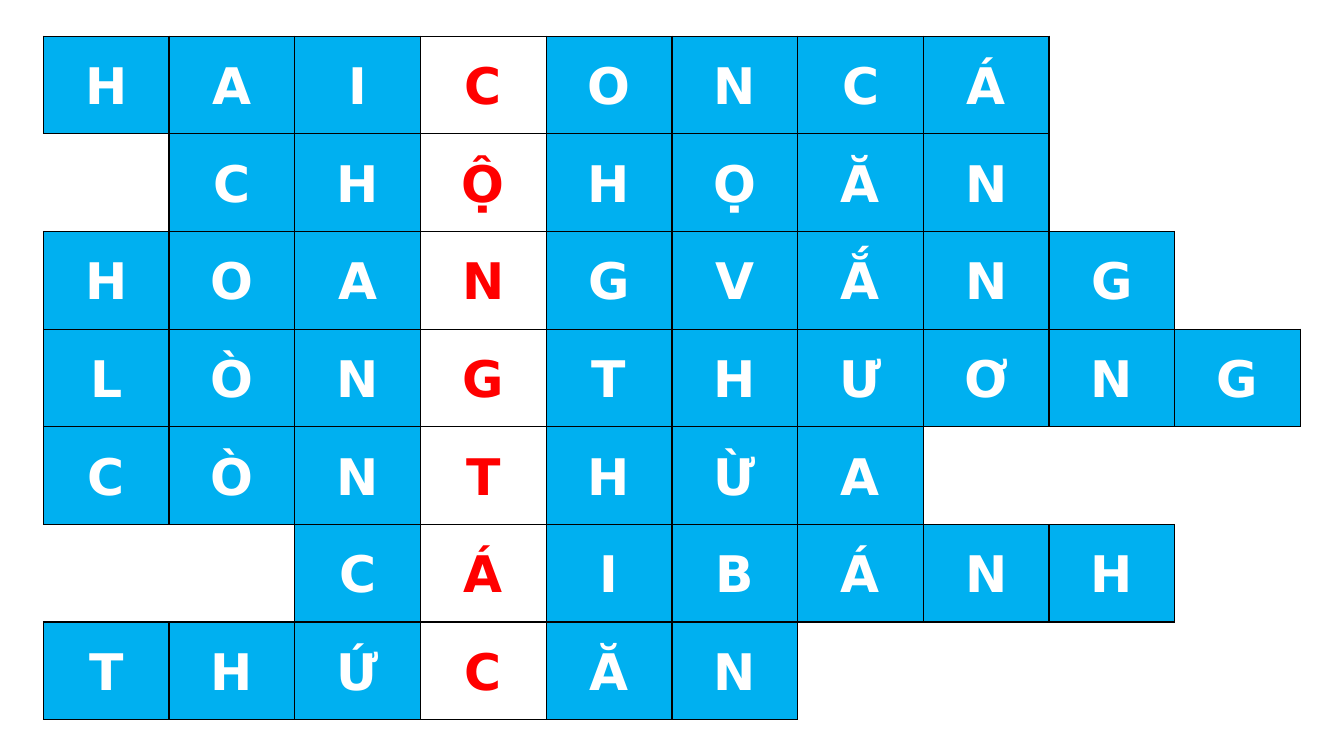
import pptx
import pptx.util
import pptx.dml.color
import pptx.enum.text
import pptx.oxml.ns
from lxml import etree

Inches = pptx.util.Inches
Pt = pptx.util.Pt
RGBColor = pptx.dml.color.RGBColor

# Content: starting column and letters of each crossword answer
ANSWERS = [
    (0, "HAICONCÁ"),
    (1, "CHỘHỌĂN"),
    (0, "HOANGVẮNG"),
    (0, "LÒNGTHƯƠNG"),
    (0, "CÒNTHỪA"),
    (2, "CÁIBÁNH"),
    (0, "THỨCĂN"),
]
KEY_COLUMN = 3
COLUMN_COUNT = 10

# Style
BLUE = RGBColor(0x00, 0xB0, 0xF0)
WHITE = RGBColor(0xFF, 0xFF, 0xFF)
RED = RGBColor(0xFF, 0x00, 0x00)
BLACK = RGBColor(0x00, 0x00, 0x00)
FONT_NAME = "DejaVu Sans"
LEFT, TOP, WIDTH, HEIGHT = Inches(0.43), Inches(0.36), Inches(12.47), Inches(6.78)
# Border tag and the (row, column) step to the neighbour across it
SIDES = {"a:lnL": (0, -1), "a:lnR": (0, 1), "a:lnT": (-1, 0), "a:lnB": (1, 0)}

LETTERS = {
    (row, start + offset): letter
    for row, (start, answer) in enumerate(ANSWERS)
    for offset, letter in enumerate(answer)
}


def add_border(cell, tag, visible):
    properties = cell._tc.get_or_add_tcPr()
    line = etree.SubElement(properties, pptx.oxml.ns.qn(tag), w=str(Pt(1)))
    if visible:
        fill = etree.SubElement(line, pptx.oxml.ns.qn("a:solidFill"))
        etree.SubElement(fill, pptx.oxml.ns.qn("a:srgbClr"), val=str(BLACK))
    else:
        etree.SubElement(line, pptx.oxml.ns.qn("a:noFill"))


def write_letter(cell, letter, is_key):
    cell.fill.solid()
    cell.fill.fore_color.rgb = WHITE if is_key else BLUE
    cell.vertical_anchor = pptx.enum.text.MSO_ANCHOR.MIDDLE
    cell.margin_left = cell.margin_right = Inches(0.07)
    cell.margin_top = cell.margin_bottom = 0
    cell.text = letter
    paragraph = cell.text_frame.paragraphs[0]
    paragraph.alignment = pptx.enum.text.PP_ALIGN.CENTER
    paragraph.line_spacing = 1.07
    paragraph.font.name = FONT_NAME
    paragraph.font.size = Pt(36)
    paragraph.font.bold = True
    paragraph.font.color.rgb = RED if is_key else WHITE


def main():
    presentation = pptx.Presentation()
    presentation.slide_width = Inches(13.33)
    presentation.slide_height = Inches(7.5)
    slide = presentation.slides.add_slide(presentation.slide_layouts[6])

    # Crossword grid
    table = slide.shapes.add_table(
        len(ANSWERS), COLUMN_COUNT, LEFT, TOP, WIDTH, HEIGHT
    ).table
    table.first_row = False
    table.horz_banding = False

    # Every edge that touches a letter gets a black line
    for row in range(len(ANSWERS)):
        for column in range(COLUMN_COUNT):
            cell = table.cell(row, column)
            letter = LETTERS.get((row, column))
            for tag, (down, across) in SIDES.items():
                neighbour = (row + down, column + across)
                add_border(cell, tag, bool(letter) or neighbour in LETTERS)
            if letter:
                write_letter(cell, letter, column == KEY_COLUMN)
            else:
                cell.fill.background()

    presentation.save("out.pptx")


if __name__ == "__main__":
    main()
